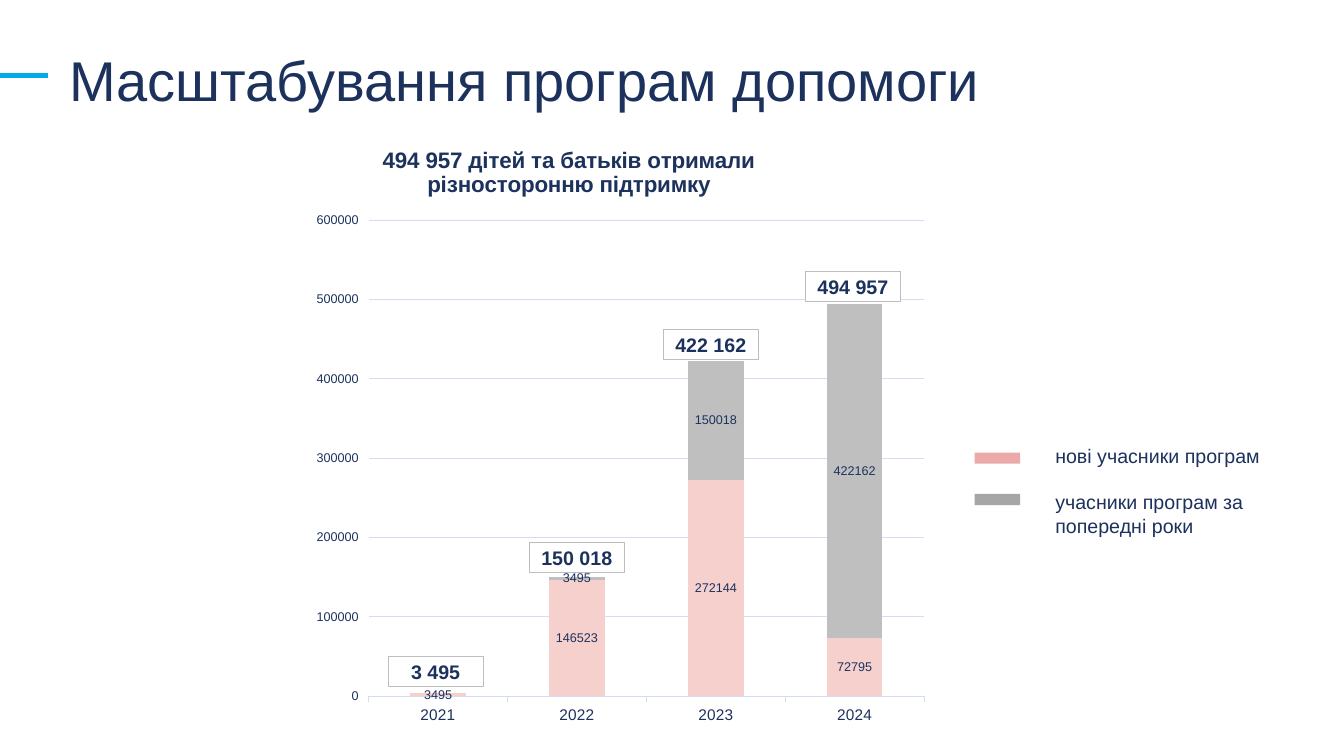
from lxml import etree
from pptx import Presentation
from pptx.chart.data import CategoryChartData
from pptx.dml.color import RGBColor
from pptx.enum import chart as ch, shapes, text
from pptx.oxml import ns
from pptx.util import Pt

NAVY = RGBColor(0x1C, 0x32, 0x5D)
CYAN = RGBColor(0x00, 0xAB, 0xEC)
GRID = RGBColor(0xD2, 0xDD, 0xF1)
WHITE = RGBColor(0xFF, 0xFF, 0xFF)
BORDER = RGBColor(0xBD, 0xBD, 0xBD)
PINK = RGBColor(0xF5, 0xD0, 0xCD)
SILVER = RGBColor(0xBF, 0xBF, 0xBF)
KEY_PINK = RGBColor(0xEB, 0xA9, 0xA9)
KEY_GREY = RGBColor(0xA6, 0xA6, 0xA6)

YEARS = ["2021", "2022", "2023", "2024"]
NEW = [3495, 146523, 272144, 72795]
EARLIER = [None, 3495, 150018, 422162]
TOTALS = [("3 495", 56.2, 371.5), ("150 018", 157, 290.2),
          ("422 162", 252.7, 138.2), ("494 957", 354.2, 96.5)]
KEYS = [("нові учасники програм", KEY_PINK, 0, 0, 24.5),
        ("учасники програм за попередні роки", KEY_GREY, 29.5, 33, 41)]


def set_font(font, size, bold=False):
    for name, value in {"name": "Arial", "size": Pt(size), "bold": bold}.items():
        setattr(font, name, value)
    font.color.rgb = NAVY


def write(sp, content, size, bold=False, align=text.PP_ALIGN.LEFT):
    tf = sp.text_frame
    for name, value in {"word_wrap": True, "auto_size": text.MSO_AUTO_SIZE.NONE,
                        "vertical_anchor": text.MSO_ANCHOR.MIDDLE}.items():
        setattr(tf, name, value)
    p = tf.paragraphs[0]
    p.alignment = align
    r = p.add_run()
    r.text = content
    set_font(r.font, size, bold)


def add_rect(s, x, y, w, h, fill, line=None):
    sp = s.shapes.add_shape(shapes.MSO_SHAPE.RECTANGLE, Pt(x), Pt(y), Pt(w), Pt(h))
    sp.shadow.inherit = False
    sp.fill.solid()
    sp.fill.fore_color.rgb = fill
    if line is None:
        sp.line.fill.background()
    else:
        sp.line.color.rgb = line
        sp.line.width = Pt(0.75)
    return sp


def add_heading(s, x, y, w, h):
    sp = s.shapes.title
    for name, value in {"left": x, "top": y, "width": w, "height": h}.items():
        setattr(sp, name, Pt(value))
    write(sp, "Масштабування програм допомоги", 40)
    mid = Pt(y + 25.2)
    cn = s.shapes.add_connector(shapes.MSO_CONNECTOR.STRAIGHT, 0, mid, Pt(x - 8.5), mid)
    cn.line.color.rgb = CYAN
    cn.line.width = Pt(3.2)
    etree.SubElement(cn._element.spPr, ns.qn("a:effectLst"))


def place(element, index, **layout):
    """Give a chart part a manual layout in fractions of the chart."""
    for old in element.findall(ns.qn("c:layout")):
        element.remove(old)
    node = etree.Element(ns.qn("c:layout"))
    manual = etree.SubElement(node, ns.qn("c:manualLayout"))
    for name, value in layout.items():
        etree.SubElement(manual, ns.qn("c:" + name)).set("val", str(value))
    element.insert(index, node)


def add_growth_chart(s, x, y, w, h):
    data = CategoryChartData()
    data.categories = YEARS
    data.add_series("Series 1", NEW)
    data.add_series("Series 2", EARLIER)
    chart = s.shapes.add_chart(ch.XL_CHART_TYPE.COLUMN_STACKED,
                               Pt(x), Pt(y), Pt(w), Pt(h), data).chart
    set_font(chart.font, 10)
    chart.has_legend = False
    title = chart.chart_title
    p = title.text_frame.paragraphs[0]
    r = p.add_run()
    r.text = "494 957 дітей та батьків отримали різносторонню підтримку"
    set_font(r.font, 16, True)
    place(title.element, 1, xMode="edge", yMode="edge", x=0.11, y=0.01)
    place(chart.element.find(".//" + ns.qn("c:plotArea")), 0, layoutTarget="inner",
          xMode="edge", yMode="edge", x=0.094, y=0.141, w=0.882, h=0.798)

    for axis, size in ((chart.category_axis, 11), (chart.value_axis, 9)):
        set_font(axis.tick_labels.font, size)
        axis.major_tick_mark = ch.XL_TICK_MARK.OUTSIDE
    values = chart.value_axis
    values.minimum_scale, values.maximum_scale, values.major_unit = 0, 600000, 100000
    values.format.line.fill.background()
    for line in (chart.category_axis.format.line, values.major_gridlines.format.line):
        line.color.rgb = GRID
        line.width = Pt(0.75)

    plot = chart.plots[0]
    plot.gap_width, plot.overlap, plot.vary_by_categories = 150, 100, False
    for series, color in zip(plot.series, (PINK, SILVER)):
        series.format.fill.solid()
        series.format.fill.fore_color.rgb = color
        labels = series.data_labels
        labels.show_value = True
        labels.position = ch.XL_LABEL_POSITION.CENTER
        set_font(labels.font, 9)

    for total, dx, dy in TOTALS:
        sp = add_rect(s, x + dx, y + dy, 68, 21.6, WHITE, BORDER)
        write(sp, total, 14, True, text.PP_ALIGN.CENTER)


def add_key(s, x, y, w):
    for label, color, swatch_dy, label_dy, h in KEYS:
        add_rect(s, x, y + 10 + swatch_dy, 32.5, 8, color)
        sp = s.shapes.add_textbox(Pt(x + 50.5), Pt(y + label_dy), Pt(w - 50.5), Pt(h))
        write(sp, label, 14)


def main():
    prs = Presentation()
    prs.slide_width, prs.slide_height = Pt(960), Pt(540)
    s = prs.slides.add_slide(prs.slide_layouts[5])
    add_heading(s, 42.5, 28.8, 891.4, 55.4)
    add_growth_chart(s, 221, 97.2, 450, 426.2)
    add_key(s, 696.2, 313.3, 247)
    prs.save("out.pptx")


if __name__ == "__main__":
    main()
